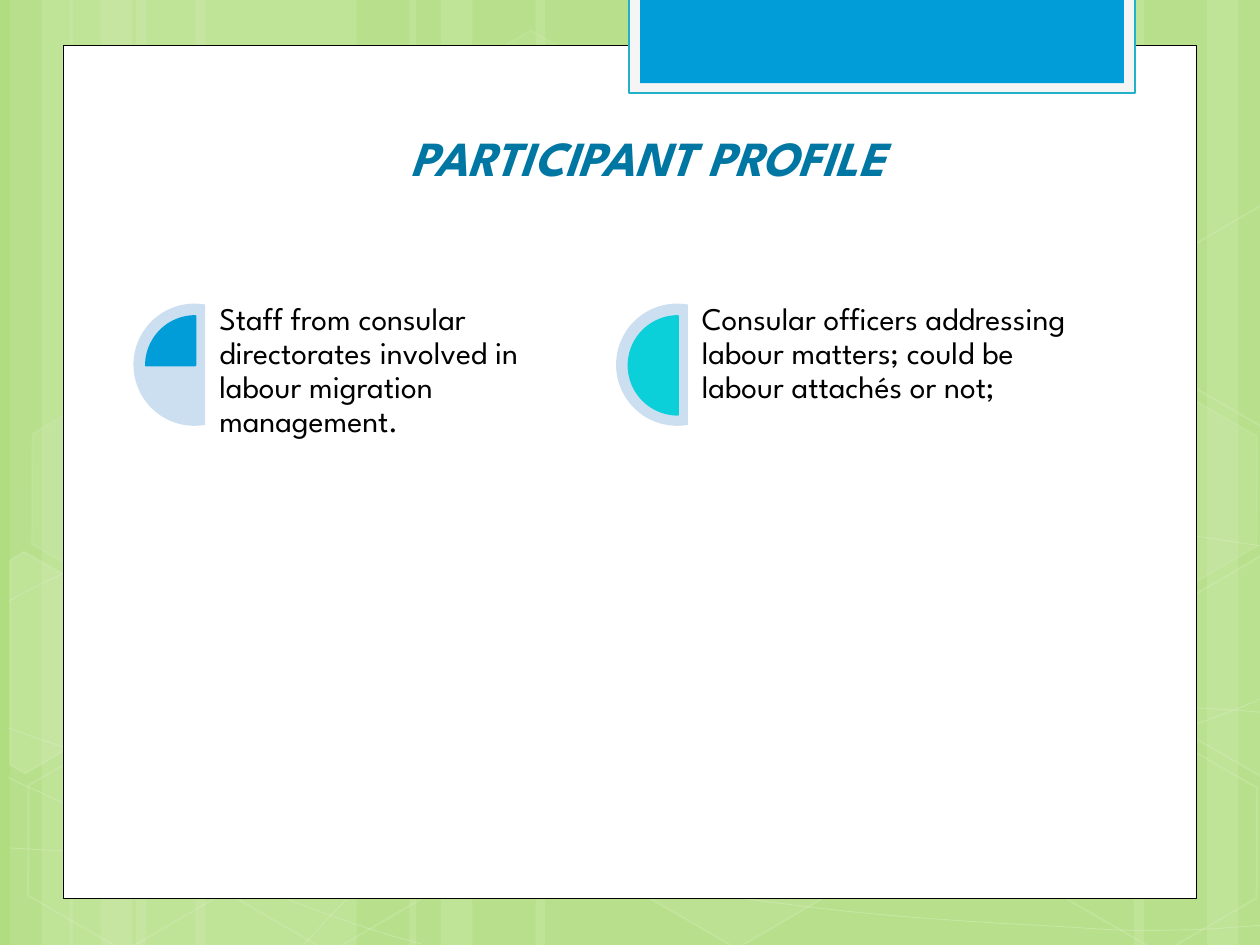
from dataclasses import dataclass

from lxml import etree
from pptx import Presentation
from pptx.dml.color import RGBColor
from pptx.enum.shapes import MSO_SHAPE
from pptx.enum.text import MSO_ANCHOR, MSO_AUTO_SIZE, PP_ALIGN
from pptx.oxml.ns import qn
from pptx.util import Inches, Pt


@dataclass(frozen=True)
class Theme:
    font: str = "League Spartan"
    backdrop: str = "B0DD7F"
    white: str = "FFFFFF"
    black: str = "000000"
    tab_frame: str = "F5F5F5"
    tab_edge: str = "21B2C9"
    blue: str = "009DD9"
    turquoise: str = "0BD0D9"
    chord: str = "CCDFF1"
    title: str = "0076A3"
    title_size: int = 28
    body_size: int = 18


theme = Theme()


def paint(shape, fill=None, line=None, width=1, fill_alpha=100, line_alpha=100):
    """Set fill and outline, with opacities in percent; None leaves either empty."""
    shape.shadow.inherit = False
    for part, color in ((shape.fill, fill), (shape.line.fill, line)):
        if color is None:
            part.background()
        else:
            part.solid()
            part.fore_color.rgb = RGBColor.from_string(color)
    if line:
        shape.line.width = Pt(width)
    properties = shape.element.spPr
    for owner, alpha in ((properties, fill_alpha), (properties.find(qn("a:ln")), line_alpha)):
        color = owner.find(qn("a:solidFill") + "/" + qn("a:srgbClr"))
        if color is not None and alpha < 100:
            etree.SubElement(color, qn("a:alpha"), val=str(alpha * 1000))


def add_preset(preset, left, top, width, height):
    return slide.shapes.add_shape(
        preset, Inches(left), Inches(top), Inches(width), Inches(height))


presentation = Presentation()
presentation.slide_width, presentation.slide_height = Inches(10), Inches(7.5)
slide = presentation.slides.add_slide(presentation.slide_layouts[5])
slide.background.fill.solid()
slide.background.fill.fore_color.rgb = RGBColor.from_string(theme.backdrop)

# Translucent vertical stripes: left, width
stripes = [(1.08, 1.75), (0.08, 0.5), (0.33, 0.83), (1.55, 1.75), (0.55, 0.5), (0.8, 0.83),
           (7.33, 1.75), (9.58, 0.5), (9, 0.83), (4.25, 3.08), (3.25, 0.5), (3.5, 0.83)]
for left, width in stripes:
    paint(add_preset(MSO_SHAPE.RECTANGLE, left, 0, width, 7.5), theme.white, fill_alpha=10)

# Thin waves: a start point, then three Bezier points per stretch
waves = [
    [(0.07, 6.73), (0.61, 6.76), (1.15, 6.79), (1.9, 6.78), (2.65, 6.77), (3.58, 6.75),
     (4.58, 6.65), (5.58, 6.55), (7, 6.36), (7.92, 6.17), (8.83, 5.98), (9.77, 5.68),
     (10.07, 5.51)],
    [(0.07, 4.77), (0.36, 4.61), (0.65, 4.46), (1.21, 4.31), (1.78, 4.16), (2.59, 3.94),
     (3.47, 3.87), (4.36, 3.8), (5.44, 3.79), (6.54, 3.87), (7.64, 3.95), (9.47, 4.26),
     (10.07, 4.34)],
    [(0.06, 6.17), (1.27, 6.72), (2.47, 7.27), (3.34, 7.49)],
    [(0.07, 5.78), (0.38, 5.89), (0.7, 6), (1.28, 6.16), (1.86, 6.31), (2.73, 6.56),
     (3.57, 6.73), (4.4, 6.9), (5.45, 7.08), (6.28, 7.18), (7.11, 7.29), (8, 7.33),
     (8.53, 7.36), (9.05, 7.4), (9.19, 7.38), (9.45, 7.38), (9.71, 7.37), (9.89, 7.35),
     (10.07, 7.34)],
    [(2.42, 7.49), (2.6, 7.29), (2.78, 7.09), (3.02, 6.91), (3.26, 6.73), (3.6, 6.53),
     (3.88, 6.39), (4.16, 6.25), (4.33, 6.19), (4.7, 6.09), (5.06, 5.99), (5.73, 5.85),
     (6.08, 5.78), (6.44, 5.71), (6.49, 5.71), (6.8, 5.69), (7.11, 5.66), (7.6, 5.63),
     (7.94, 5.62), (8.29, 5.61), (8.86, 5.62), (8.86, 5.62), (9.08, 5.62), (9.31, 5.62),
     (9.53, 5.62), (9.71, 5.63), (9.88, 5.64), (9.97, 5.65), (10.06, 5.66), (10.03, 5.65),
     (10.06, 5.66)],
]
for wave in waves:
    start, *controls = [(Inches(x), Inches(y)) for x, y in wave]
    builder = slide.shapes.build_freeform(*start)
    builder.add_line_segments(controls, close=False)
    curve = builder.convert_to_shape()
    segments = list(curve.element.iter(qn("a:lnTo")))
    for i in range(0, len(segments), 3):
        bezier = etree.SubElement(segments[i].getparent(), qn("a:cubicBezTo"))
        for segment in segments[i:i + 3]:
            bezier.append(segment[0])
            segment.getparent().remove(segment)
    paint(curve, line=theme.white, width=0.5, line_alpha=20)

# Faint hexagons: left, top, fill opacity (0 for none), line opacity
hexagons = [(3.34, 0.36, 4, 8), (4.97, 5.89, 6, 12), (0.11, 5.91, 0, 12),
            (0.14, 3.12, 7, 8), (1.74, 5.92, 0, 12), (8.34, 5.93, 0, 12),
            (8.34, 3.14, 7, 8)]
for left, top, fill_alpha, line_alpha in hexagons:
    hexagon = add_preset(MSO_SHAPE.HEXAGON, left, top, 1.75, 1.52)
    hexagon.adjustments[0], hexagon.adjustments[1] = 0.285, 1.155
    hexagon.rotation = 30
    paint(hexagon, theme.white if fill_alpha else None, theme.white, 1, fill_alpha, line_alpha)

# Hexagons cut off by the slide edge: fill opacity, corners
cut_hexagons = [
    (10, [(0.08, 4.45), (0.19, 4.38), (0.96, 4.82), (0.95, 5.7), (0.2, 6.14), (0.08, 6.07)]),
    (4, [(9.26, 4.85), (10.01, 4.41), (10.09, 4.46), (10.09, 6.13), (10.02, 6.17),
         (9.26, 5.73)]),
    (0, [(9.26, 2.07), (10.01, 1.63), (10.1, 1.68), (10.09, 3.35), (10.02, 3.39),
         (9.26, 2.95)]),
]
for fill_alpha, corners in cut_hexagons:
    first, *others = [(Inches(x), Inches(y)) for x, y in corners]
    builder = slide.shapes.build_freeform(*first)
    builder.add_line_segments(others, close=True)
    paint(builder.convert_to_shape(), theme.white if fill_alpha else None, theme.white, 1,
          fill_alpha, 12)

# White page with the tab at its top
paint(add_preset(MSO_SHAPE.RECTANGLE, 0.5, 0.36, 9, 6.77), theme.white, theme.black, 0.5)
paint(add_preset(MSO_SHAPE.RECTANGLE, 4.99, -0.02, 4.02, 0.76),
      theme.tab_frame, theme.tab_edge, 1.25)
paint(add_preset(MSO_SHAPE.RECTANGLE, 5.08, -0.02, 3.84, 0.68), theme.blue)

title = slide.shapes.title
slide.shapes.element.append(title.element)  # bring in front of the page
title.left, title.top, title.width, title.height = (
    Inches(1.3), Inches(0.96), Inches(7.68), Inches(0.57))
title.text_frame.vertical_anchor = MSO_ANCHOR.BOTTOM
title.text_frame.auto_size = MSO_AUTO_SIZE.SHAPE_TO_FIT_TEXT
heading = title.text_frame.paragraphs[0]
heading.alignment = PP_ALIGN.CENTER
run = heading.add_run()
run.text = "PARTICIPANT PROFILE"
run.font.name, run.font.size = theme.font, Pt(theme.title_size)
run.font.bold = run.font.italic = True
run.font.color.rgb = RGBColor.from_string(theme.title)

# Participant groups: left, text width, pie start angle, colour, text
groups = [
    (1.06, 2.78, 108, theme.blue,
     "Staff from consular directorates involved in labour migration management."),
    (4.89, 2.89, 54, theme.turquoise,
     "Consular officers addressing labour matters; could be labour attachés or not;"),
]
top = 2.41
for left, text_width, pie_start, color, profile in groups:
    chord = add_preset(MSO_SHAPE.CHORD, left, top, 0.97, 0.97)
    chord.adjustments[0], chord.adjustments[1] = 48, 168
    paint(chord, theme.chord)
    pie = add_preset(MSO_SHAPE.PIE, left + 0.1, top + 0.1, 0.78, 0.78)
    pie.adjustments[0], pie.adjustments[1] = pie_start, 162
    paint(pie, color, color, 1.25)

    frame = slide.shapes.add_textbox(Inches(left + 0.68), Inches(top), Inches(text_width),
                                     Inches(3.89)).text_frame
    frame.word_wrap = True
    frame.margin_left = frame.margin_right = frame.margin_top = frame.margin_bottom = 0
    frame.paragraphs[0].line_spacing = 0.9
    run = frame.paragraphs[0].add_run()
    run.text = profile
    run.font.name, run.font.size = theme.font, Pt(theme.body_size)
    run.font.color.rgb = RGBColor.from_string(theme.black)

presentation.save("out.pptx")
